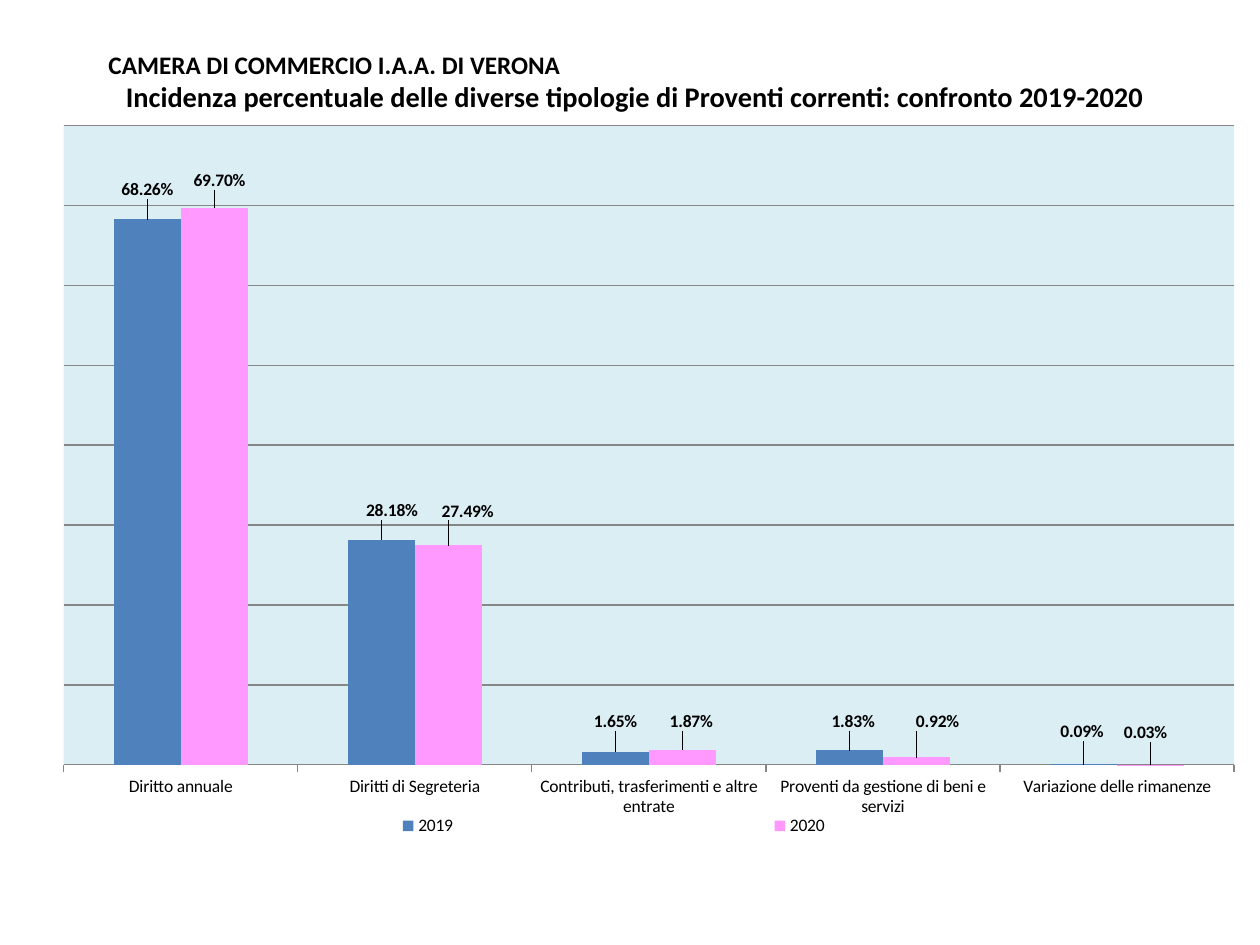
"""Build the slide comparing the shares of current income in 2019 and 2020."""
from lxml import etree
from pptx import Presentation
from pptx.chart.data import CategoryChartData
from pptx.dml.color import RGBColor
from pptx.enum.chart import XL_CHART_TYPE, XL_LABEL_POSITION, XL_LEGEND_POSITION, XL_TICK_MARK
from pptx.enum.text import MSO_ANCHOR, MSO_AUTO_SIZE, PP_ALIGN
from pptx.oxml.ns import qn
from pptx.util import Pt

CLUSTERED = XL_CHART_TYPE.COLUMN_CLUSTERED
OUTSIDE_END = XL_LABEL_POSITION.OUTSIDE_END
RIGHT = XL_LEGEND_POSITION.RIGHT
TICK_OUT = XL_TICK_MARK.OUTSIDE
TICK_NONE = XL_TICK_MARK.NONE
MIDDLE = MSO_ANCHOR.MIDDLE
NO_AUTOFIT = MSO_AUTO_SIZE.NONE
LEFT, CENTER = PP_ALIGN.LEFT, PP_ALIGN.CENTER

THEME = {
    "font": "Calibri",
    "text": RGBColor(0x00, 0x00, 0x00),
    "grid": RGBColor(0x86, 0x86, 0x86),
    "plot": "DBEEF4",
    "2019": RGBColor(0x4F, 0x81, 0xBD),
    "2020": RGBColor(0xFF, 0x99, 0xFF),
    "body_size": Pt(10),
    "owner_size": Pt(14.4),
    "heading_size": Pt(16.2),
}
CHART_WIDTH, CHART_HEIGHT = 669.6, 411
PERCENT = "0.00%"


def format_font(font, size, bold):
    values = {"name": THEME["font"], "size": size, "bold": bold}
    for attribute, value in values.items():
        setattr(font, attribute, value)
    font.color.rgb = THEME["text"]


def set_layout(parent, index, values):
    for old in parent.findall(qn("c:layout")):
        parent.remove(old)
    layout = etree.Element(qn("c:layout"))
    manual = etree.SubElement(layout, qn("c:manualLayout"))
    for tag, value in values.items():
        etree.SubElement(manual, qn(f"c:{tag}")).set("val", str(value))
    parent.insert(index, layout)


presentation = Presentation()
presentation.slide_width, presentation.slide_height = Pt(720), Pt(540)
slide = presentation.slides.add_slide(presentation.slide_layouts[5])

title = slide.shapes.title
title_box = {"left": Pt(36), "top": Pt(21.6), "width": Pt(653), "height": Pt(49.7)}
for attribute, value in title_box.items():
    setattr(title, attribute, value)
title_frame = title.text_frame
title_format = {
    "word_wrap": True,
    "auto_size": NO_AUTOFIT,
    "vertical_anchor": MIDDLE,
    "margin_left": Pt(26),
    "margin_right": Pt(26),
    "margin_top": 0,
    "margin_bottom": 0,
}
for attribute, value in title_format.items():
    setattr(title_frame, attribute, value)
title_lines = [
    ("CAMERA DI COMMERCIO I.A.A. DI VERONA", THEME["owner_size"], LEFT),
    (
        "Incidenza percentuale delle diverse tipologie di Proventi correnti: confronto 2019-2020",
        THEME["heading_size"],
        CENTER,
    ),
]
title_frame.text = "\n".join(words for words, _, _ in title_lines)
for paragraph, (_, size, alignment) in zip(title_frame.paragraphs, title_lines):
    paragraph.alignment = alignment
    paragraph.space_before = Pt(0)
    format_font(paragraph.runs[0].font, size, True)

shares = {
    "2019": [0.6826, 0.2818, 0.0165, 0.0183, 0.0009],
    "2020": [0.6970, 0.2749, 0.0187, 0.0092, 0.0003],
}
label_shifts = {
    "2019": [(0, -8.5), (6, -8), (0, -8.5), (2, -8), (-1, -10)],
    "2020": [(3, -7), (11, -11), (5, -7.5), (12, -12), (-3, -10)],
}
income_data = CategoryChartData(number_format=PERCENT)
income_data.categories = [
    "Diritto annuale",
    "Diritti di Segreteria",
    "Contributi, trasferimenti e altre entrate",
    "Proventi da gestione di beni e servizi",
    "Variazione delle rimanenze",
]
for year, values in shares.items():
    income_data.add_series(year, values)

income_chart = slide.shapes.add_chart(
    CLUSTERED, Pt(36), Pt(71.3), Pt(CHART_WIDTH), Pt(CHART_HEIGHT), income_data
).chart
income_chart.has_title = False
format_font(income_chart.font, THEME["body_size"], False)

share_axis = income_chart.value_axis
share_scale = {
    "minimum_scale": 0,
    "maximum_scale": 0.8,
    "major_unit": 0.1,
    "has_major_gridlines": True,
    "visible": False,
}
for attribute, value in share_scale.items():
    setattr(share_axis, attribute, value)
share_axis.tick_labels.number_format = PERCENT
share_axis.tick_labels.number_format_is_linked = False
category_axis = income_chart.category_axis
category_axis.major_tick_mark = TICK_OUT
category_axis.minor_tick_mark = TICK_NONE
for rule in (share_axis.major_gridlines.format.line, category_axis.format.line):
    rule.color.rgb = THEME["grid"]
    rule.width = Pt(0.75)

columns = income_chart.plots[0]
columns.gap_width = 150
columns.overlap = 0
columns.vary_by_categories = False
for year_series in columns.series:
    year = year_series.name
    year_series.format.fill.solid()
    year_series.format.fill.fore_color.rgb = THEME[year]
    year_series.invert_if_negative = False
    labels = year_series.data_labels
    label_format = {
        "show_value": True,
        "number_format": PERCENT,
        "number_format_is_linked": False,
        "position": OUTSIDE_END,
    }
    for attribute, value in label_format.items():
        setattr(labels, attribute, value)
    format_font(labels.font, THEME["body_size"], True)
    for index in range(len(label_shifts[year])):
        label = year_series.points[index].data_label
        format_font(label.font, THEME["body_size"], True)
        label.position = OUTSIDE_END
    point_labels = year_series._element.iter(qn("c:dLbl"))
    for point_label, (across, down) in zip(point_labels, label_shifts[year]):
        set_layout(point_label, 1, {"x": across / CHART_WIDTH, "y": down / CHART_HEIGHT})

income_chart.has_legend = True
legend = income_chart.legend
legend.position = RIGHT
legend.include_in_layout = False
format_font(legend.font, THEME["body_size"], False)
set_layout(
    legend._element,
    1,
    {"xMode": "edge", "yMode": "edge", "x": 0.02, "y": 0.95, "w": 0.9, "h": 0.05},
)

plot_area = income_chart._chartSpace.chart.plotArea
set_layout(
    plot_area,
    0,
    {
        "layoutTarget": "inner",
        "xMode": "edge",
        "yMode": "edge",
        "x": 0,
        "y": 0,
        "w": 1,
        "h": 0.89,
    },
)
plot_format = etree.SubElement(plot_area, qn("c:spPr"))
plot_fill = etree.SubElement(plot_format, qn("a:solidFill"))
etree.SubElement(plot_fill, qn("a:srgbClr")).set("val", THEME["plot"])

presentation.save("out.pptx")
